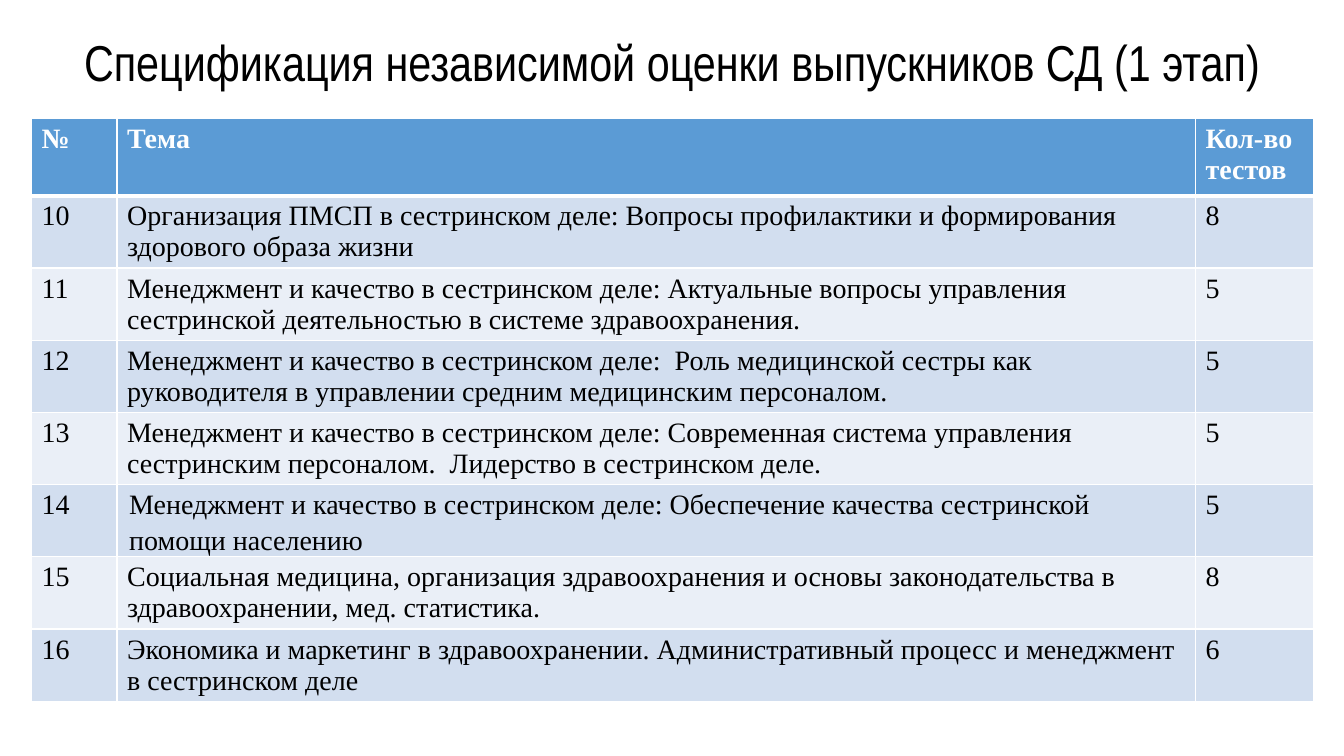
from lxml import etree
from pptx import Presentation
from pptx.dml.color import RGBColor
from pptx.enum.text import MSO_ANCHOR, MSO_AUTO_SIZE, PP_ALIGN
from pptx.oxml.ns import qn
from pptx.util import Pt

CENTER = PP_ALIGN.CENTER
MIDDLE = MSO_ANCHOR.MIDDLE
NO_AUTOFIT = MSO_AUTO_SIZE.NONE

BLACK = RGBColor(0x00, 0x00, 0x00)
WHITE = RGBColor(0xFF, 0xFF, 0xFF)
HEADER_BLUE = RGBColor(0x5B, 0x9B, 0xD5)
BAND_DARK = RGBColor(0xD2, 0xDE, 0xEF)
BAND_LIGHT = RGBColor(0xEA, 0xEF, 0xF7)

TITLE_FONT = "Arial Narrow"
TABLE_FONT = "Times New Roman"
TITLE = "Спецификация независимой оценки выпускников СД (1 этап)"
HEADER = ("№", "Тема", "Кол-во тестов")
FIRST_NUMBER = 10
SPACED_NUMBER = 14
TOPICS = [
    ("Организация ПМСП в сестринском деле: Вопросы профилактики и "
     "формирования здорового образа жизни", 8),
    ("Менеджмент и качество в сестринском деле: Актуальные вопросы управления "
     "сестринской деятельностью в системе здравоохранения.", 5),
    ("Менеджмент и качество в сестринском деле:  Роль медицинской сестры как "
     "руководителя в управлении средним медицинским персоналом.", 5),
    ("Менеджмент и качество в сестринском деле: Современная система управления "
     "сестринским персоналом.  Лидерство в сестринском деле.", 5),
    ("Менеджмент и качество в сестринском деле: Обеспечение качества "
     "сестринской помощи населению", 5),
    ("Социальная медицина, организация здравоохранения и основы "
     "законодательства в здравоохранении, мед. статистика.", 8),
    ("Экономика и маркетинг в здравоохранении. Административный процесс и "
     "менеджмент в сестринском деле", 6),
]

LEFT = Pt(22.6)
WIDTH = Pt(915.4)
COLUMN_WIDTHS = (Pt(61), Pt(770.4), Pt(84))
HEADER_HEIGHT = Pt(55.2)
ROW_HEIGHT = Pt(51.4)


def add_run(paragraph, text, font, size, color, bold=False):
    run = paragraph.add_run()
    run.text = text
    run.font.name = font
    run.font.size = size
    run.font.color.rgb = color
    run.font.bold = bold


def set_borders(cell, widths):
    """Draw white cell borders; widths maps a border tag to its width."""
    properties = cell._tc.get_or_add_tcPr()
    for tag, width in widths.items():
        line = etree.SubElement(properties, qn(tag), w=str(width))
        fill = etree.SubElement(line, qn("a:solidFill"))
        etree.SubElement(fill, qn("a:srgbClr"), val=str(WHITE))


presentation = Presentation()
presentation.slide_width = Pt(960)
presentation.slide_height = Pt(540)
slide = presentation.slides.add_slide(presentation.slide_layouts[5])

title = slide.shapes.title
title.left, title.top, title.width, title.height = LEFT, Pt(28.8), WIDTH, Pt(35.3)
title.text_frame.auto_size = NO_AUTOFIT
title.text_frame.word_wrap = True
title.text_frame.vertical_anchor = MIDDLE
title_paragraph = title.text_frame.paragraphs[0]
title_paragraph.alignment = CENTER
title_paragraph.line_spacing = 0.9
add_run(title_paragraph, TITLE, TITLE_FONT, Pt(36), BLACK)

rows = [HEADER]
for number, (topic, tests) in enumerate(TOPICS, FIRST_NUMBER):
    rows.append((str(number), topic, str(tests)))

table_height = HEADER_HEIGHT + ROW_HEIGHT * len(TOPICS)
table = slide.shapes.add_table(
    len(rows), len(HEADER), LEFT, Pt(84.6), WIDTH, table_height).table
for column, width in zip(table.columns, COLUMN_WIDTHS):
    column.width = width

for row_index, texts in enumerate(rows):
    is_header = row_index == 0
    table.rows[row_index].height = HEADER_HEIGHT if is_header else ROW_HEIGHT
    if is_header:
        fill_color = HEADER_BLUE
    else:
        fill_color = BAND_DARK if row_index % 2 else BAND_LIGHT
    borders = {
        "a:lnL": Pt(1),
        "a:lnR": Pt(1),
        "a:lnT": Pt(3 if row_index == 1 else 1),
        "a:lnB": Pt(3 if is_header else 1),
    }
    for column_index, text in enumerate(texts):
        cell = table.cell(row_index, column_index)
        set_borders(cell, borders)
        cell.fill.solid()
        cell.fill.fore_color.rgb = fill_color
        add_run(cell.text_frame.paragraphs[0], text, TABLE_FONT, Pt(20),
                WHITE if is_header else BLACK, bold=is_header)

spaced_cell = table.cell(SPACED_NUMBER - FIRST_NUMBER + 1, 1)
spaced_cell.margin_left = spaced_cell.margin_right = Pt(8.64)
spaced_cell.margin_top = spaced_cell.margin_bottom = 0
spaced_cell.text_frame.paragraphs[0].line_spacing = 1.15

presentation.save("out.pptx")
